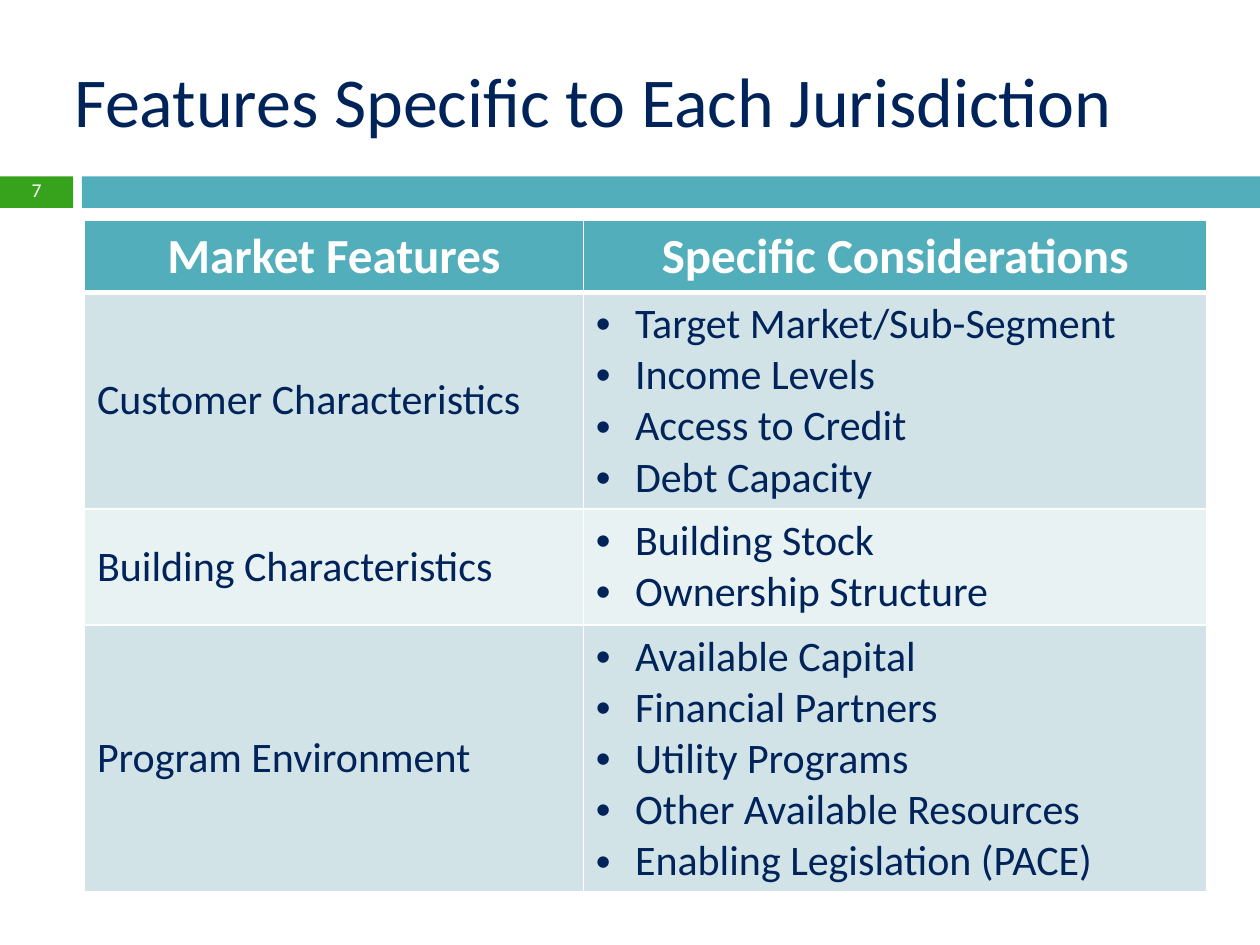
from lxml import etree
from pptx import Presentation
from pptx.dml.color import RGBColor
from pptx.enum import shapes, text
from pptx.oxml.ns import qn
from pptx.util import Inches, Pt

NAVY = RGBColor(0x00, 0x24, 0x5A)
TEAL = RGBColor(0x52, 0xAE, 0xBA)
GREEN = RGBColor(0x37, 0xA3, 0x1D)
WHITE = RGBColor(0xFF, 0xFF, 0xFF)
BAND_DARK = RGBColor(0xD1, 0xE3, 0xE7)
BAND_LIGHT = RGBColor(0xE9, 0xF2, 0xF3)
FONT = "Calibri"

HEADERS = ["Market Features", "Specific Considerations"]
FEATURES = [
    ("Customer Characteristics",
     ["Target Market/Sub-Segment", "Income Levels", "Access to Credit", "Debt Capacity"]),
    ("Building Characteristics",
     ["Building Stock", "Ownership Structure"]),
    ("Program Environment",
     ["Available Capital", "Financial Partners", "Utility Programs",
      "Other Available Resources", "Enabling Legislation (PACE)"]),
]
COL_WIDTHS = [3.96, 4.95]
ROW_HEIGHTS = [0.57, 1.72, 0.92, 2.12]


def add_run(p, words, size, color, bold=False):
    r = p.add_run()
    r.text = words
    r.font.name = FONT
    r.font.size = Pt(size)
    r.font.bold = bold
    r.font.color.rgb = color


def add_bar(s, left, width, color):
    sp = s.shapes.add_shape(shapes.MSO_SHAPE.RECTANGLE, Inches(left), Inches(1.4),
                            Inches(width), Inches(0.25))
    sp.shadow.inherit = False
    sp.fill.solid()
    sp.fill.fore_color.rgb = color
    sp.line.fill.background()


def add_text(s, box, words, size, color):
    sp = s.shapes.add_textbox(*(Inches(v) for v in box))
    tf = sp.text_frame
    tf.word_wrap = True
    tf.vertical_anchor = text.MSO_ANCHOR.MIDDLE
    p = tf.paragraphs[0]
    add_run(p, words, size, color)
    return p


def set_borders(cell, bottom, top):
    tc_pr = cell._tc.get_or_add_tcPr()
    widths = {"lnL": 1, "lnR": 1, "lnT": top, "lnB": bottom}
    for i, (side, width) in enumerate(widths.items()):
        ln = etree.Element(qn(f"a:{side}"), w=str(Pt(width)))
        fill = etree.SubElement(ln, qn("a:solidFill"))
        etree.SubElement(fill, qn("a:srgbClr"), val=str(WHITE))
        tc_pr.insert(i, ln)


def set_bullet(p):
    p_pr = p._p.get_or_add_pPr()
    indent = Inches(0.31)
    p_pr.set("marL", str(indent))
    p_pr.set("indent", str(-indent))
    etree.SubElement(p_pr, qn("a:buFont"), typeface="Arial")
    etree.SubElement(p_pr, qn("a:buChar"), char="•")


def fill_cell(cell, lines, fill, size=24, color=NAVY, header=False, bullets=False,
              top=1):
    cell.fill.solid()
    cell.fill.fore_color.rgb = fill
    set_borders(cell, 3 if header else 1, top)
    tf = cell.text_frame
    for i, line in enumerate(lines):
        p = tf.add_paragraph() if i else tf.paragraphs[0]
        if bullets:
            set_bullet(p)
        if header:
            p.alignment = text.PP_ALIGN.CENTER
        add_run(p, line, size, color, bold=header)


def add_features_table(s):
    frame = s.shapes.add_table(len(ROW_HEIGHTS), len(COL_WIDTHS), Inches(0.67), Inches(1.75),
                               Inches(sum(COL_WIDTHS)), Inches(sum(ROW_HEIGHTS)))
    table = frame.table
    for col, width in zip(table.columns, COL_WIDTHS):
        col.width = Inches(width)
    for row, height in zip(table.rows, ROW_HEIGHTS):
        row.height = Inches(height)

    # Header row
    for i, label in enumerate(HEADERS):
        fill_cell(table.cell(0, i), [label], TEAL, 28, WHITE, header=True)

    # One banded row per market feature
    for i, (feature, considerations) in enumerate(FEATURES, start=1):
        band = BAND_DARK if i % 2 else BAND_LIGHT
        top = 3 if i == 1 else 1
        name_cell = table.cell(i, 0)
        fill_cell(name_cell, [feature], band, top=top)
        name_cell.vertical_anchor = text.MSO_ANCHOR.MIDDLE
        fill_cell(table.cell(i, 1), considerations, band, bullets=True, top=top)


def main():
    prs = Presentation()
    prs.slide_width, prs.slide_height = Inches(10), Inches(7.5)
    s = prs.slides.add_slide(prs.slide_layouts[6])

    # Divider bars
    add_bar(s, 0, 0.58, GREEN)
    add_bar(s, 0.65, 9.35, TEAL)

    # Title and slide number
    add_text(s, (0.49, 0.25, 9.1, 1.08), "Features Specific to Each Jurisdiction", 40, NAVY)
    number = add_text(s, (0, 1.39, 0.58, 0.27), "7", 11.2, WHITE)
    number.alignment = text.PP_ALIGN.CENTER
    number.line_spacing = 0.8

    # Market features table
    add_features_table(s)

    prs.save("out.pptx")


if __name__ == "__main__":
    main()
